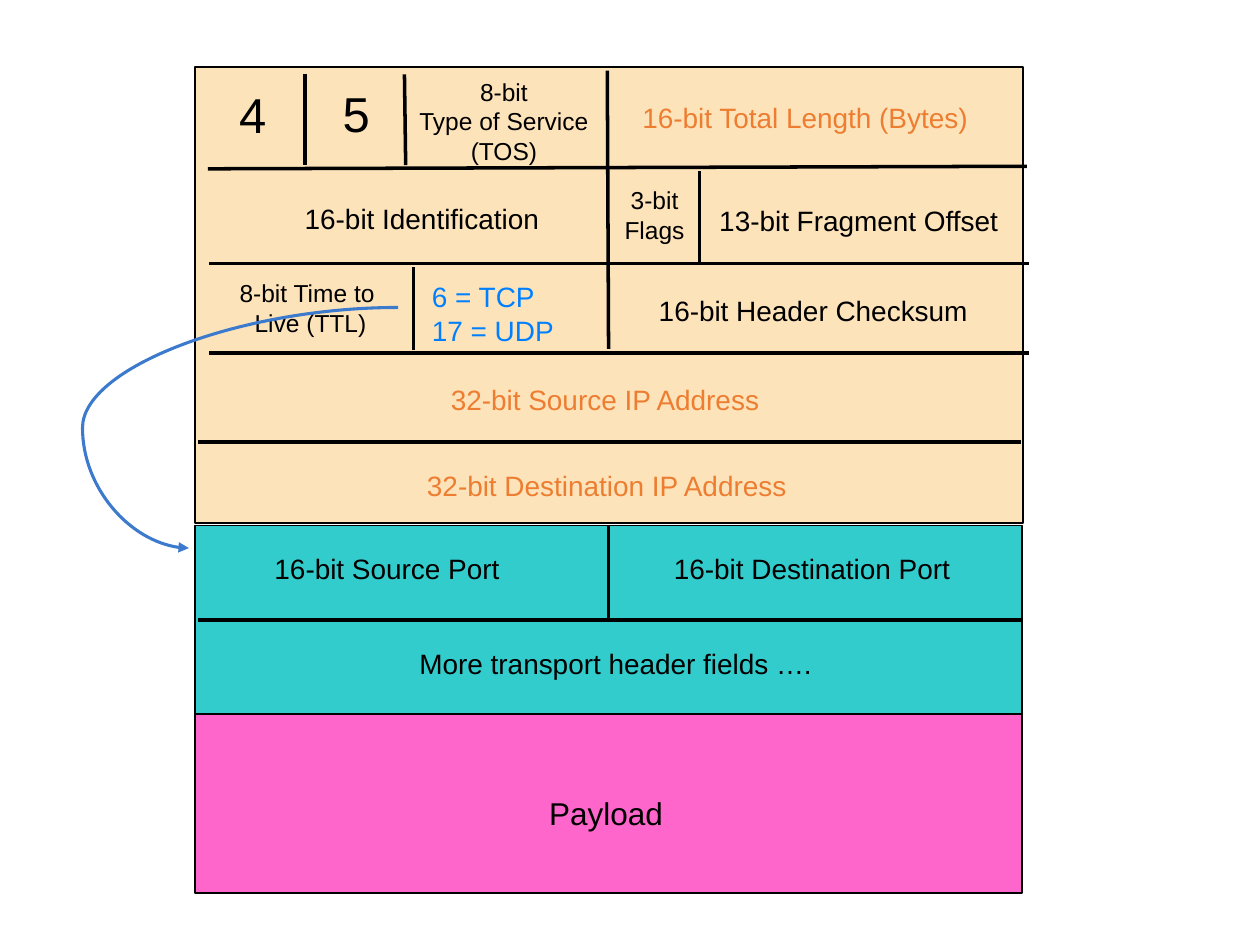
from dataclasses import dataclass

from lxml import etree
from pptx import Presentation
from pptx.dml import color
from pptx.enum import shapes, text
from pptx.oxml import ns
from pptx.util import Inches, Pt


@dataclass(frozen=True)
class Theme:
    """Colours, font and type sizes of the packet diagram."""
    font: str = "Arial"
    ink: str = "000000"
    highlight: str = "ED7D31"
    protocol: str = "0080FF"
    pointer: str = "3B7ACC"
    ip_fill: str = "FDE3BA"
    transport_fill: str = "33CCCC"
    payload_fill: str = "FF66CC"
    small: int = 14
    body: int = 16
    large: int = 18
    digit: int = 28


THEME = Theme()
CENTER = text.PP_ALIGN.CENTER
LEFT = text.PP_ALIGN.LEFT

DIVIDERS = [
    (1.65, 1.34, 8.15, 1.32),
    (1.66, 2.09, 8.17, 2.09),
    (1.66, 2.8, 8.17, 2.8),
    (1.57, 3.51, 8.1, 3.51),
    (1.57, 4.92, 8.1, 4.92),
    (4.82, 0.56, 4.83, 2.77),
    (2.42, 0.59, 2.42, 1.31),
    (3.21, 0.59, 3.22, 1.31),
    (5.55, 1.36, 5.55, 2.08),
    (3.28, 2.12, 3.28, 2.78),
]

FIELDS = [
    ("4", 1.8, 0.62, 0.41, THEME.digit, THEME.ink, CENTER),
    ("5", 2.62, 0.61, 0.41, THEME.digit, THEME.ink, CENTER),
    ("8-bit\nType of Service\n(TOS)", 3.18, 0.56, 1.64, THEME.small, THEME.ink, CENTER),
    ("16-bit Total Length (Bytes)", 5, 0.75, 3, THEME.body, THEME.highlight, LEFT),
    ("16-bit Identification", 2.32, 1.55, 2.06, THEME.body, THEME.ink, LEFT),
    ("3-bit\nFlags", 4.84, 1.42, 0.71, THEME.small, THEME.ink, CENTER),
    ("13-bit Fragment Offset", 5.61, 1.57, 2.42, THEME.body, THEME.ink, LEFT),
    ("8-bit Time to \nLive (TTL)", 1.76, 2.16, 1.41, THEME.small, THEME.ink, CENTER),
    ("6 = TCP\v17 = UDP", 3.33, 2.17, 1.17, THEME.body, THEME.protocol, LEFT),
    ("16-bit Header Checksum", 5.13, 2.28, 2.66, THEME.body, THEME.ink, LEFT),
    ("32-bit Source IP Address", 3.48, 2.99, 2.83, THEME.body, THEME.highlight, LEFT),
    ("32-bit Destination IP Address", 3.29, 3.67, 3.28, THEME.body, THEME.highlight, LEFT),
    ("16-bit Source Port", 2.08, 4.33, 2.11, THEME.body, THEME.ink, LEFT),
    ("16-bit Destination Port", 5.25, 4.33, 2.57, THEME.body, THEME.ink, LEFT),
    ("More transport header fields ….", 3.23, 5.08, 3.32, THEME.body, THEME.ink, LEFT),
    ("Payload", 4.26, 6.25, 1.16, THEME.large, THEME.ink, LEFT),
]


def rgb(value):
    """Turn a hex string into a colour."""
    return color.RGBColor.from_string(value)


def add_section(slide, left, top, width, height, fill):
    """Draw one outlined section of the packet."""
    section = slide.shapes.add_shape(
        shapes.MSO_SHAPE.RECTANGLE, *map(Inches, (left, top, width, height)))
    section.shadow.inherit = False
    section.fill.solid()
    section.fill.fore_color.rgb = rgb(fill)
    section.line.color.rgb = rgb(THEME.ink)
    section.line.width = Pt(1)
    return section


def add_line(slide, ends, stroke=THEME.ink, width=2, kind=shapes.MSO_CONNECTOR.STRAIGHT):
    """Draw a connector without a shadow between two points."""
    line = slide.shapes.add_connector(kind, *map(Inches, ends))
    line.line.color.rgb = rgb(stroke)
    line.line.width = Pt(width)
    etree.SubElement(line._element.spPr, ns.qn("a:effectLst"))
    return line


def add_protocol_pointer(slide):
    """Draw the curved arrow from the protocol field to the transport header."""
    pointer = add_line(slide, (3.16, 2.44, 1.5, 4.35), THEME.pointer, 1.75,
                       shapes.MSO_CONNECTOR.CURVE)
    geometry = pointer._element.spPr.find(ns.qn("a:prstGeom"))
    adjustments = geometry.find(ns.qn("a:avLst"))
    if adjustments is None:
        adjustments = etree.SubElement(geometry, ns.qn("a:avLst"))
    etree.SubElement(adjustments, ns.qn("a:gd"), name="adj1", fmla="val 150900")
    etree.SubElement(pointer.line._get_or_add_ln(), ns.qn("a:tailEnd"), type="triangle")


def add_field(slide, wording, left, top, width, size, ink, align):
    """Write a field label in a box as tall as its lines."""
    height = len(wording.splitlines()) * size * 1.17 / 72 + 0.1
    label = slide.shapes.add_textbox(*map(Inches, (left, top, width, height)))
    frame = label.text_frame
    frame.word_wrap = False
    frame.auto_size = text.MSO_AUTO_SIZE.SHAPE_TO_FIT_TEXT
    frame.text = wording
    for paragraph in frame.paragraphs:
        paragraph.alignment = align
        paragraph.font.name = THEME.font
        paragraph.font.size = Pt(size)
        paragraph.font.color.rgb = rgb(ink)


def main():
    """Build the packet header slide."""
    deck = Presentation()
    deck.slide_width, deck.slide_height = Inches(10), Inches(7.5)
    slide = deck.slides.add_slide(deck.slide_layouts[6])
    transport = add_section(slide, 1.55, 4.17, 6.56, 1.5, THEME.transport_fill)
    add_section(slide, 1.55, 0.53, 6.57, 3.62, THEME.ip_fill)
    add_section(slide, 1.55, 5.67, 6.56, 1.42, THEME.payload_fill)
    for ends in DIVIDERS:
        add_line(slide, ends)
    port_divider = add_line(slide, (4.83, 4.17, 4.83, 4.92))
    port_divider.begin_connect(transport, 0)
    for field in FIELDS:
        add_field(slide, *field)
    add_protocol_pointer(slide)
    deck.save("out.pptx")


if __name__ == "__main__":
    main()
